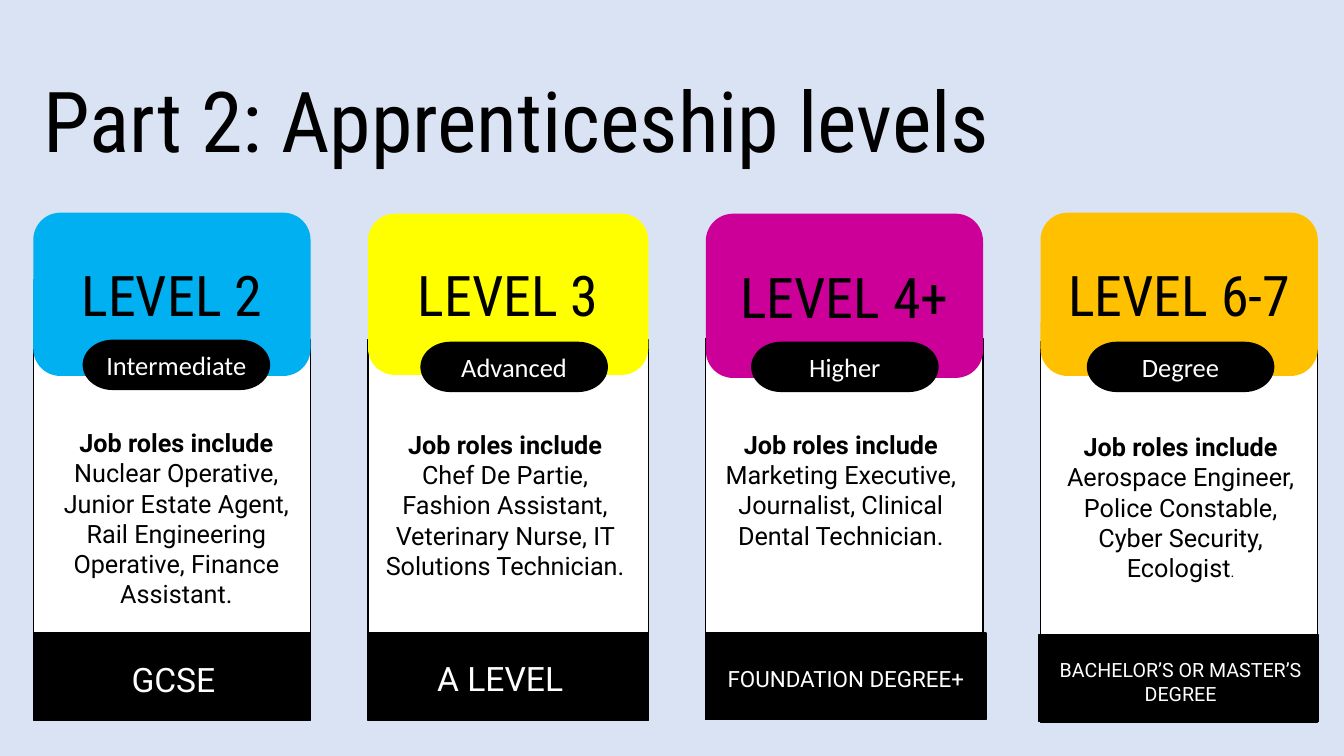
from collections import namedtuple

from pptx import Presentation
from pptx.dml.color import RGBColor
from pptx.enum import shapes, text
from pptx.util import Inches, Pt

KIND = shapes.MSO_SHAPE
BLACK, WHITE = "000000", "FFFFFF"
Card = namedtuple("Card", "color level stage jobs need panel head pill body bar note size")
CARDS = [
    Card("00B0F0", "LEVEL 2", "Intermediate",
         [("Nuclear Operative, Junior Estate Agent, Rail Engineering "
           "Operative, Finance Assistant.", 18)],
         "GCSE", (0.33, 3.37, 2.75, 3.78), (0.33, 2.11, 2.75, 1.62), (0.82, 3.37),
         (0.43, 4.19, 2.64, 1.91), (0.33, 6.28, 2.75, 0.86), (0.76, 6.49, 1.92, 0.5), 24),
    Card("FFFF00", "LEVEL 3", "Advanced",
         [("Chef De Partie, Fashion Assistant, Veterinary Nurse, IT "
           "Solutions Technician.", 18)],
         "A LEVEL", (3.65, 3.37, 2.78, 3.78), (3.65, 2.12, 2.78, 1.6), (4.17, 3.39),
         (3.69, 4.21, 2.64, 1.61), (3.65, 6.28, 2.78, 0.86), (4, 6.48, 1.92, 0.5), 24),
    Card("CC0099", "LEVEL 4+", "Higher",
         [("Marketing Executive, Journalist, Clinical Dental Technician.", 18)],
         "FOUNDATION DEGREE+", (7, 3.36, 2.75, 3.78), (7, 2.12, 2.75, 1.63), (7.45, 3.39),
         (7.02, 4.21, 2.64, 1.31), (7, 6.28, 2.78, 0.86), (6.87, 6.55, 3.04, 0.37), 16),
    Card("FFC000", "LEVEL 6-7", "Degree",
         [("Aerospace Engineer, Police Constable, Cyber Security, Ecologist", 18),
          (".", 10.5)],
         "BACHELOR’S OR MASTER’S DEGREE", (10.32, 3.39, 2.75, 3.78),
         (10.32, 2.11, 2.75, 1.62), (10.78, 3.39), (10.39, 4.23, 2.64, 1.61),
         (10.3, 6.3, 2.78, 0.86), (10.19, 6.48, 3.04, 0.57), 14),
]


def rgb(code):
    """Turn a hex string into a colour."""
    return RGBColor.from_string(code)


def write(para, words, size=18, face="Roboto", color=BLACK, bold=False,
          align=text.PP_ALIGN.CENTER):
    """Add a formatted run to a paragraph."""
    para.alignment = align
    run = para.add_run()
    run.text = words
    font = run.font
    font.size, font.name, font.bold = Pt(size), face, bold
    font.color.rgb = rgb(color)


def shape(slide, kind, box, fill, line=None):
    """Add a filled preset shape and return its text frame."""
    item = slide.shapes.add_shape(kind, *map(Inches, box))
    item.shadow.inherit = False
    item.fill.solid()
    item.fill.fore_color.rgb = rgb(fill)
    if line:
        item.line.color.rgb = rgb(line)
        item.line.width = Pt(1)
    else:
        item.line.fill.background()
    frame = item.text_frame
    frame.vertical_anchor = text.MSO_ANCHOR.MIDDLE
    return frame


def label(slide, box):
    """Add a wrapping text box and return its text frame."""
    frame = slide.shapes.add_textbox(*map(Inches, box)).text_frame
    frame.word_wrap = True
    frame.auto_size = text.MSO_AUTO_SIZE.SHAPE_TO_FIT_TEXT
    return frame


def heading(slide, words):
    """Place and format the slide title."""
    title = slide.shapes.title
    title.left, title.top, title.width, title.height = map(Inches, (0.33, 0.74, 9.7, 1))
    frame = title.text_frame
    frame.auto_size = text.MSO_AUTO_SIZE.NONE
    frame.vertical_anchor = text.MSO_ANCHOR.TOP
    para = frame.paragraphs[0]
    para.line_spacing = 0.9
    write(para, words, size=60, face="Roboto Condensed", align=text.PP_ALIGN.LEFT)


def column(slide, card):
    """Build the card for one apprenticeship level."""
    shape(slide, KIND.RECTANGLE, card.panel, WHITE, BLACK)
    head = shape(slide, KIND.ROUNDED_RECTANGLE, card.head, card.color)
    head.margin_left = head.margin_right = Inches(0.11)
    head.margin_top = head.margin_bottom = Inches(0.11)
    write(head.paragraphs[0], card.level, size=40, face="Roboto Condensed")
    pill = shape(slide, KIND.FLOWCHART_TERMINATOR, (*card.pill, 1.86, 0.5), BLACK)
    pill.word_wrap = False
    write(pill.paragraphs[0], card.stage, size=18.9, face="Calibri", color=WHITE)
    body = label(slide, card.body)
    write(body.paragraphs[0], "Job roles include", bold=True)
    jobs = body.add_paragraph()
    for words, size in card.jobs:
        write(jobs, words, size=size)
    shape(slide, KIND.RECTANGLE, card.bar, BLACK, BLACK)
    note = label(slide, card.note)
    write(note.paragraphs[0], card.need, size=card.size, color=WHITE)


def main():
    """Build and save the slide."""
    deck = Presentation()
    deck.slide_width, deck.slide_height = Inches(13.33), Inches(7.5)
    slide = deck.slides.add_slide(deck.slide_layouts[5])
    slide.background.fill.solid()
    slide.background.fill.fore_color.rgb = rgb("DAE3F3")
    heading(slide, "Part 2: Apprenticeship levels")
    for card in CARDS:
        column(slide, card)
    deck.save("out.pptx")


if __name__ == "__main__":
    main()
